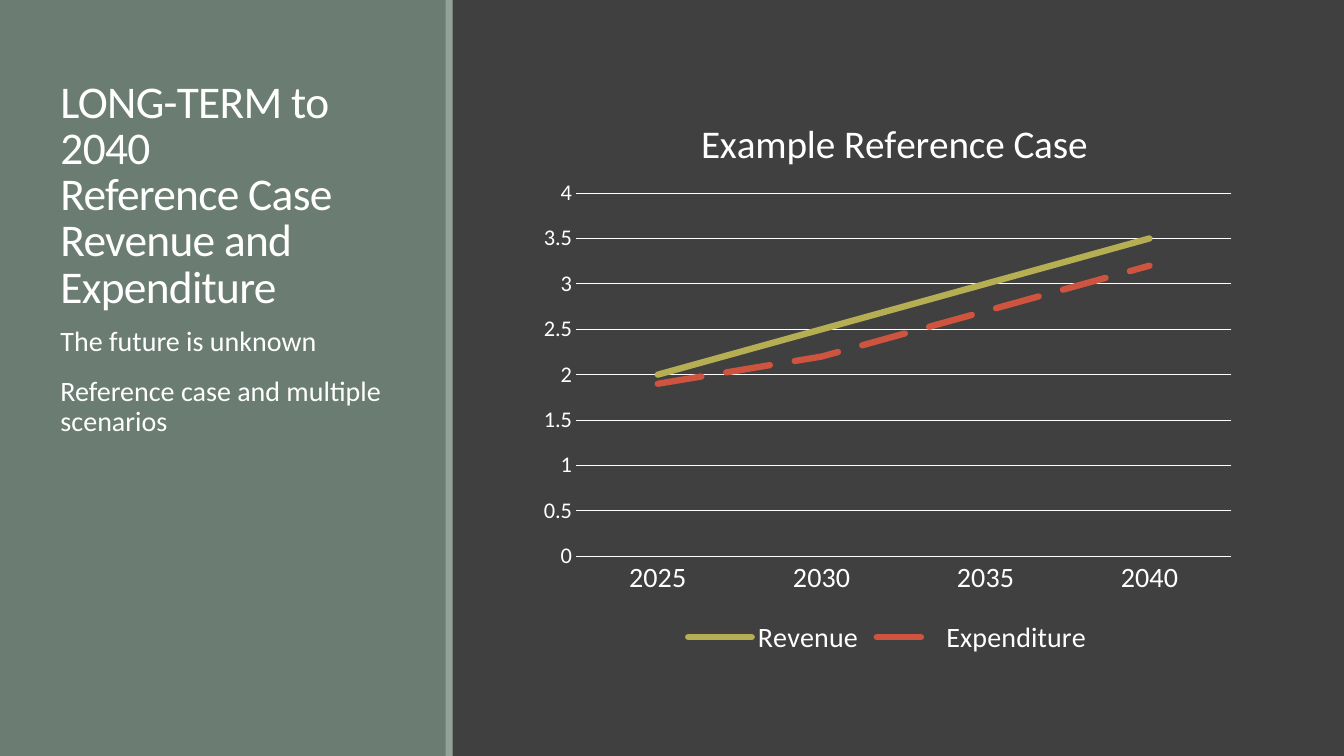
from dataclasses import dataclass

from lxml import etree
from pptx import Presentation
from pptx.chart.data import CategoryChartData
from pptx.dml.color import RGBColor
from pptx.enum.chart import XL_CHART_TYPE, XL_LEGEND_POSITION, XL_MARKER_STYLE, XL_TICK_MARK
from pptx.enum.dml import MSO_LINE
from pptx.enum.shapes import MSO_SHAPE
from pptx.enum.text import MSO_ANCHOR, MSO_AUTO_SIZE
from pptx.oxml.ns import qn
from pptx.util import Emu, Pt

PX = 9144  # 100 px to the inch
CAPTION_LAYOUT = 7
RECTANGLE = MSO_SHAPE.RECTANGLE
LINE_CHART = XL_CHART_TYPE.LINE
LEGEND_BOTTOM = XL_LEGEND_POSITION.BOTTOM
NO_MARKER = XL_MARKER_STYLE.NONE
NO_TICK = XL_TICK_MARK.NONE
LONG_DASH = MSO_LINE.LONG_DASH
TOP, BOTTOM = MSO_ANCHOR.TOP, MSO_ANCHOR.BOTTOM
NO_AUTOFIT = MSO_AUTO_SIZE.NONE


@dataclass(frozen=True)
class Theme:
    font: str = "Calibri"
    background: str = "404040"
    panel: str = "6B7D72"
    stripe: str = "93A299"
    text: str = "FFFFFF"
    revenue: str = "B5AE53"
    expenditure: str = "CF543F"
    title_size: float = 32.4
    body_size: float = 20
    chart_size: float = 10
    chart_title_size: float = 28
    category_size: float = 20
    value_size: float = 16
    legend_size: float = 20
    thin_line: float = 0.75
    series_line: float = 4.5


THEME = Theme()
YEARS = ["2025", "2030", "2035", "2040"]
SERIES = [
    ("Revenue", [2, 2.5, 3, 3.5], THEME.revenue, None),
    ("Expenditure", [1.9, 2.2, 2.7, 3.2], THEME.expenditure, LONG_DASH),
]


def px(*lengths):
    return [Emu(length * PX) for length in lengths]


def rgb(color):
    return RGBColor.from_string(color)


def style_font(font, size):
    font.name = THEME.font
    font.size = Pt(size)
    font.bold = False
    font.color.rgb = rgb(THEME.text)


def style_line(line, color, width):
    line.color.rgb = rgb(color)
    line.width = Pt(width)


def add_panel(slide, box, color):
    panel = slide.shapes.add_shape(RECTANGLE, *px(*box))
    panel.shadow.inherit = False
    panel.fill.solid()
    panel.fill.fore_color.rgb = rgb(color)
    panel.line.fill.background()
    return panel


def fill_placeholder(holder, box, paragraphs, size, line_spacing, anchor):
    holder.left, holder.top, holder.width, holder.height = px(*box)
    frame = holder.text_frame
    frame.word_wrap = True
    frame.auto_size = NO_AUTOFIT
    frame.vertical_anchor = anchor
    for number, text in enumerate(paragraphs):
        paragraph = frame.add_paragraph() if number else frame.paragraphs[0]
        paragraph.text = text
        paragraph.line_spacing = line_spacing
        for run in paragraph.runs:
            style_font(run.font, size)
    return frame.paragraphs


def set_layout(parent, index, **values):
    """Place a chart part by fractions of the chart's size."""
    for old in parent.findall(qn("c:layout")):
        parent.remove(old)
    layout = etree.Element(qn("c:layout"))
    manual = etree.SubElement(layout, qn("c:manualLayout"))
    for tag, value in values.items():
        etree.SubElement(manual, qn(f"c:{tag}"), val=str(value))
    parent.insert(index, layout)


def style_axes(chart):
    categories, values = chart.category_axis, chart.value_axis
    for axis, size in ((categories, THEME.category_size), (values, THEME.value_size)):
        axis.major_tick_mark = axis.minor_tick_mark = NO_TICK
        style_font(axis.tick_labels.font, size)
    categories.has_major_gridlines = False
    style_line(categories.format.line, THEME.text, THEME.thin_line)
    values.minimum_scale, values.maximum_scale, values.major_unit = 0, 4, 0.5
    values.format.line.fill.background()
    values.has_major_gridlines = True
    style_line(values.major_gridlines.format.line, THEME.text, THEME.thin_line)


def add_line_chart(slide, box, title, years, series):
    data = CategoryChartData()
    data.categories = years
    for name, numbers, _, _ in series:
        data.add_series(name, numbers)
    chart = slide.shapes.add_chart(LINE_CHART, *px(*box), data).chart
    style_font(chart.font, THEME.chart_size)
    style_axes(chart)

    # Series lines
    plot = chart.plots[0]
    plot.vary_by_categories = False
    for drawn, (_, _, color, dash) in zip(plot.series, series):
        drawn.smooth = False
        drawn.marker.style = NO_MARKER
        line = drawn.format.line
        style_line(line, color, THEME.series_line)
        if dash is not None:
            line.dash_style = dash
        drawn._element.find(f".//{qn('a:ln')}").set("cap", "rnd")

    # Title, legend and plot area
    chart.has_title = True
    heading = chart.chart_title
    heading.text_frame.text = title
    style_font(heading.text_frame.paragraphs[0].runs[0].font, THEME.chart_title_size)
    set_layout(heading._element, 1, xMode="edge", yMode="edge", x=0.23, y=0.05)
    chart.has_legend = True
    chart.legend.position = LEGEND_BOTTOM
    chart.legend.include_in_layout = False
    style_font(chart.legend.font, THEME.legend_size)
    plot_area = chart._chartSpace.find(f".//{qn('c:plotArea')}")
    set_layout(plot_area, 0, layoutTarget="inner", xMode="edge", yMode="edge",
               x=0.065, y=0.194, w=0.916, h=0.627)


def main():
    deck = Presentation()
    deck.slide_width, deck.slide_height = px(1333, 750)
    slide = deck.slides.add_slide(deck.slide_layouts[CAPTION_LAYOUT])
    slide.background.fill.solid()
    slide.background.fill.fore_color.rgb = rgb(THEME.background)
    title, spare, body = slide.placeholders
    spare.element.getparent().remove(spare.element)

    # Side panel and its stripe, behind the text
    panel = add_panel(slide, (0, 0, 443, 750), THEME.panel)
    stripe = add_panel(slide, (442, 0, 7, 750), THEME.stripe)
    for part in (panel, stripe):
        title.element.addprevious(part.element)

    # Title and key points
    heading = fill_placeholder(
        title, (50, 65, 350, 250),
        ["LONG-TERM to 2040\nReference Case Revenue and Expenditure"],
        THEME.title_size, 0.85, BOTTOM)
    for run in heading[0].runs:
        run.font._element.set("spc", "-50")
    points = fill_placeholder(
        body, (50, 320, 350, 370),
        ["The future is unknown", "Reference case and multiple scenarios"],
        THEME.body_size, 0.9, TOP)
    for point in points:
        point.space_before, point.space_after = Pt(12), Pt(2)

    # Revenue and expenditure chart
    add_line_chart(slide, (525, 80, 710, 575), "Example Reference Case", YEARS, SERIES)
    deck.save("out.pptx")


if __name__ == "__main__":
    main()
